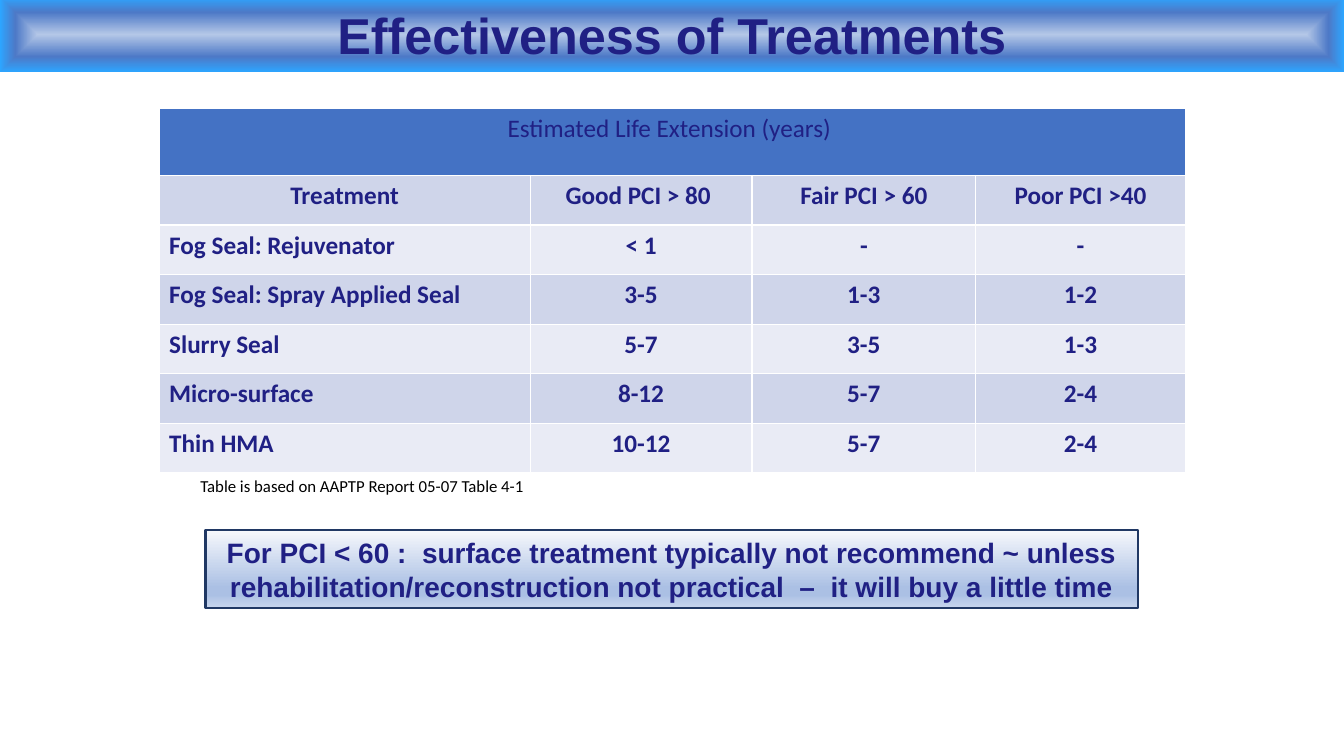
from lxml import etree
from pptx import Presentation
from pptx.dml.color import RGBColor
from pptx.enum import shapes, text
from pptx.oxml import ns
from pptx.util import Cm, Pt

TITLE = "Effectiveness of Treatments"
TABLE_TITLE = "Estimated Life Extension (years) "
ROWS = [
    ("Treatment", "Good PCI > 80 ", "Fair PCI > 60", "Poor PCI >40"),
    ("Fog Seal: Rejuvenator", "< 1", "-", "-"),
    ("Fog Seal: Spray Applied Seal", "3-5", "1-3", "1-2"),
    ("Slurry Seal", "5-7", "3-5", "1-3"),
    ("Micro-surface", "8-12", "5-7", "2-4"),
    ("Thin HMA", "10-12", "5-7", "2-4"),
]
SOURCE_NOTE = "Table is based on AAPTP Report 05-07 Table 4-1"
ADVICE = ("For PCI < 60 :  surface treatment typically not recommend ~ unless "
          "rehabilitation/reconstruction not practical  –  it will buy a little time")

NAVY, HEADER_BLUE = "202084", "4472C4"
BANDS = ("CFD5EA", "E9EBF5")
TITLE_STOPS = [(0, "B4C7E7"), (59, "4D79C7"), (100, "2DA5FF")]
ADVICE_STOPS = [(0, "F6F8FC"), (74, "ABC0E4"), (83, "ABC0E4"), (100, "C7D5ED")]
COLUMN_WIDTHS = (9.35, 5.59, 5.64, 5.28)
HEADER_HEIGHT, ROW_HEIGHT = 1.68, 1.25


def color(hex_string):
    return RGBColor.from_string(hex_string)


def write(frame, words, font_name, size, hex_string=NAVY, bold=False, centred=True):
    frame.word_wrap = True
    paragraph = frame.paragraphs[0]
    paragraph.text = words
    paragraph.alignment = text.PP_ALIGN.CENTER if centred else text.PP_ALIGN.LEFT
    font = paragraph.font
    font.name, font.size, font.bold = font_name, Pt(size), bold
    font.color.rgb = color(hex_string)


def set_gradient(shape, stops, from_centre=False):
    """Fill with (percent, colour) stops, top to bottom or outwards from the centre."""
    shape.fill.gradient()
    gradient = shape.element.spPr.find(ns.qn("a:gradFill"))
    for child in list(gradient):
        gradient.remove(child)
    stop_list = etree.SubElement(gradient, ns.qn("a:gsLst"))
    for percent, hex_string in stops:
        stop = etree.SubElement(stop_list, ns.qn("a:gs"), pos=str(percent * 1000))
        etree.SubElement(stop, ns.qn("a:srgbClr"), val=hex_string)
    if from_centre:
        outline = etree.SubElement(gradient, ns.qn("a:path"), path="rect")
        etree.SubElement(outline, ns.qn("a:fillToRect"),
                         {side: "50000" for side in "ltrb"})
    else:
        etree.SubElement(gradient, ns.qn("a:lin"), ang="5400000", scaled="0")


def add_banner(slide, box, words, size, stops, from_centre=False):
    shape = slide.shapes.add_shape(shapes.MSO_SHAPE.RECTANGLE, *map(Cm, box))
    shape.shadow.inherit = False
    shape.line.fill.background()
    set_gradient(shape, stops, from_centre)
    shape.text_frame.vertical_anchor = text.MSO_ANCHOR.MIDDLE
    write(shape.text_frame, words, "Arial", size, bold=True)
    return shape


def fill_cell(cell, words, fill, **style):
    cell.fill.solid()
    cell.fill.fore_color.rgb = color(fill)
    write(cell.text_frame, words, "Calibri", 18, **style)


def add_treatment_table(slide):
    height = HEADER_HEIGHT + ROW_HEIGHT * len(ROWS)
    table = slide.shapes.add_table(
        len(ROWS) + 1, len(COLUMN_WIDTHS),
        Cm(4.01), Cm(2.74), Cm(sum(COLUMN_WIDTHS)), Cm(height)).table
    for column, width in zip(table.columns, COLUMN_WIDTHS):
        column.width = Cm(width)
    for index, row in enumerate(table.rows):
        row.height = Cm(ROW_HEIGHT if index else HEADER_HEIGHT)

    table.cell(0, 0).merge(table.cell(0, len(COLUMN_WIDTHS) - 1))
    fill_cell(table.cell(0, 0), TABLE_TITLE, HEADER_BLUE)
    for r, row in enumerate(ROWS):
        for c, words in enumerate(row):
            fill_cell(table.cell(r + 1, c), words, BANDS[r % 2],
                      bold=True, centred=r == 0 or c > 0)


def main():
    presentation = Presentation()
    presentation.slide_width, presentation.slide_height = Cm(33.87), Cm(19.05)
    slide = presentation.slides.add_slide(presentation.slide_layouts[6])

    add_treatment_table(slide)
    add_banner(slide, (0, -0.08, 33.87, 1.9), TITLE, 36, TITLE_STOPS, from_centre=True)
    advice = add_banner(slide, (5.18, 13.36, 23.5, 1.96), ADVICE, 20, ADVICE_STOPS)
    advice.line.color.rgb = color("203864")
    advice.line.width = Pt(1.5)

    note = slide.shapes.add_textbox(Cm(4.8), Cm(11.86), Cm(8.81), Cm(0.76))
    write(note.text_frame, SOURCE_NOTE, "Calibri", 12, "000000", centred=False)

    presentation.save("out.pptx")


if __name__ == "__main__":
    main()
